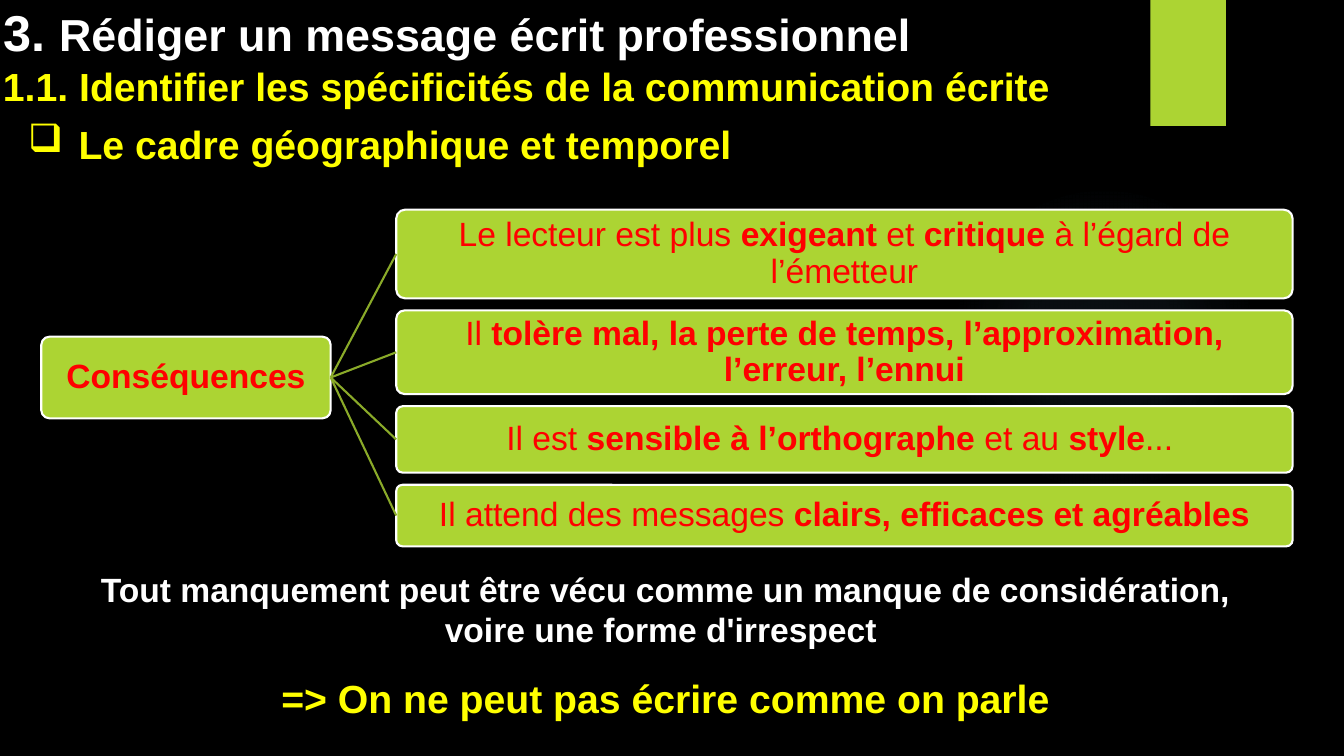
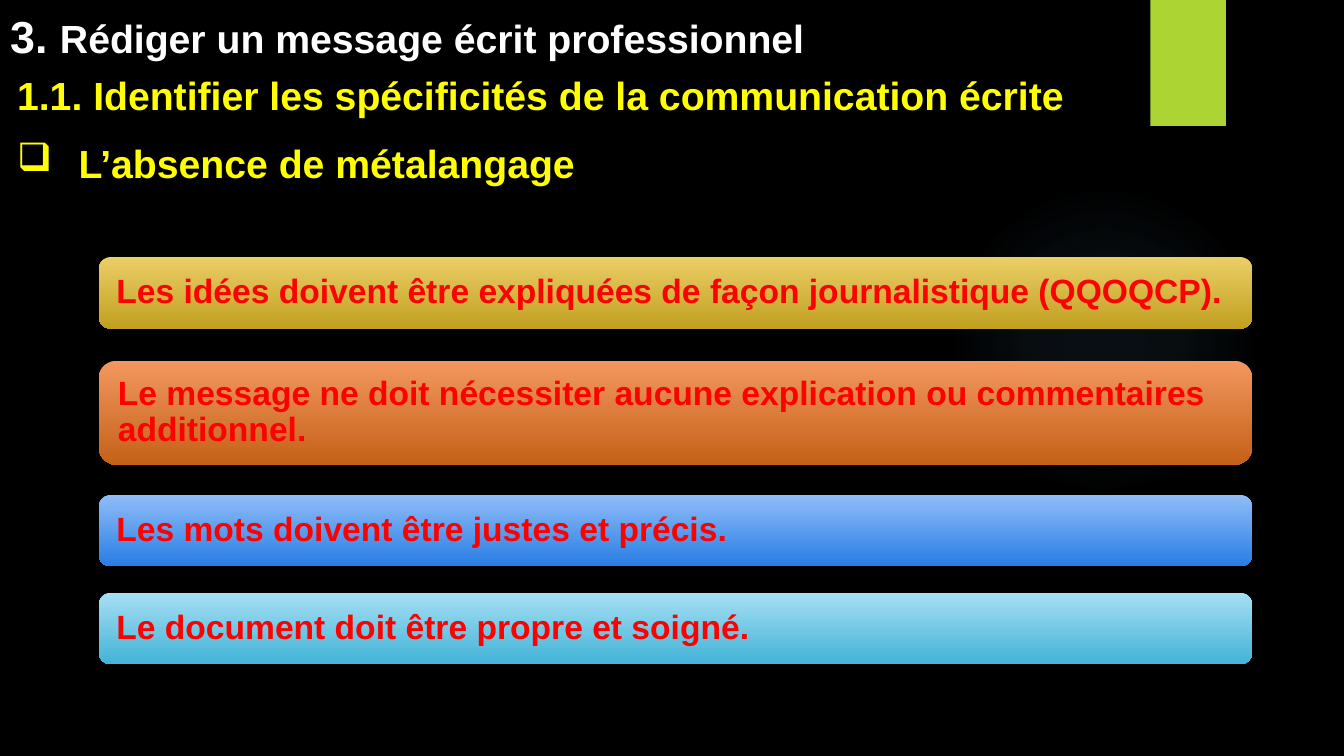
from pptx import Presentation
from pptx.dml.color import RGBColor
from pptx.enum.shapes import MSO_CONNECTOR, MSO_SHAPE
from pptx.enum.text import MSO_ANCHOR, MSO_AUTO_SIZE, PP_ALIGN
from pptx.oxml import parse_xml
from pptx.oxml.ns import nsdecls, qn
from pptx.util import Inches, Pt

BLACK = RGBColor(0x00, 0x00, 0x00)
WHITE = RGBColor(0xFF, 0xFF, 0xFF)
YELLOW = RGBColor(0xFF, 0xFF, 0x00)
RED = RGBColor(0xFF, 0x00, 0x00)
LIME = RGBColor(0xAC, 0xD4, 0x33)
OLIVE = RGBColor(0x8A, 0xAA, 0x29)
SKY = RGBColor(0x7A, 0xC4, 0xF0)
GOLD = RGBColor(0xEB, 0xCE, 0x66), RGBColor(0xC1, 0xA0, 0x21)
ORANGE = RGBColor(0xF2, 0x97, 0x5F), RGBColor(0xC5, 0x61, 0x18)
BLUE = RGBColor(0x8F, 0xBD, 0xF8), RGBColor(0x28, 0x7D, 0xE4)
CYAN = RGBColor(0xA6, 0xDF, 0xF3), RGBColor(0x43, 0xB3, 0xD8)

RECT, ROUND, OVAL = MSO_SHAPE.RECTANGLE, MSO_SHAPE.ROUNDED_RECTANGLE, MSO_SHAPE.OVAL
STRAIGHT = MSO_CONNECTOR.STRAIGHT
TOP, MIDDLE, BOTTOM = MSO_ANCHOR.TOP, MSO_ANCHOR.MIDDLE, MSO_ANCHOR.BOTTOM
LEFT, CENTER = PP_ALIGN.LEFT, PP_ALIGN.CENTER
FIXED = MSO_AUTO_SIZE.NONE

FONT = "Arial"
WIDE, HIGH = 13.33, 7.5
CELL = 0.1           # side of one grid cell, in inches
TITLE_ONLY = 5
LEFT_SITE, RIGHT_SITE = 1, 3
POINT_COL = 7.8      # column where the text of a bulleted point starts


def cells(*counts):
    return [Inches(n * CELL) for n in counts]


class Deck:
    def __init__(self):
        self.prs = Presentation()
        self.prs.slide_width, self.prs.slide_height = Inches(WIDE), Inches(HIGH)
        fill = self.prs.slide_master.background.fill
        fill.solid()
        fill.fore_color.rgb = BLACK
        self.slide = None

    def page(self, col, base, size, topic_at):
        """Start a slide with its glow, tab, title and topic line."""
        self.slide = self.prs.slides.add_slide(self.prs.slide_layouts[TITLE_ONLY])
        self.glow(94.1, 18.3, 30.8)
        self.shape(RECT, (114.1, 0, 7.5, 12.5), LIME)
        title = self.slide.shapes.title
        title.left, title.top, title.width, title.height = cells(col, 0, 112, base)
        par = self.frame(title, BOTTOM).paragraphs[0]
        par.alignment = LEFT
        self.run(par, "3. ", size + 4, WHITE)
        self.run(par, "Rédiger un message écrit professionnel", size, WHITE)
        par = self.text((*topic_at, 107, 5.7))
        self.run(par, "1.1. Identifier les spécificités de la communication écrite", 28, YELLOW)

    def frame(self, shape, anchor, inset=0):
        frame = shape.text_frame
        frame.word_wrap, frame.auto_size = True, FIXED
        frame.vertical_anchor = anchor
        frame.margin_left = frame.margin_right = cells(inset)[0]
        return frame

    def run(self, par, words, size, color, bold=True):
        run = par.add_run()
        run.text = words
        font = run.font
        font.name, font.size, font.bold = FONT, Pt(size), bold
        font.color.rgb = color

    def text(self, area, align=LEFT):
        box = self.slide.shapes.add_textbox(*cells(*area))
        par = self.frame(box, TOP).paragraphs[0]
        par.alignment = align
        return par

    def point(self, col, row, words):
        par = self.text((col, row, 100, 5.7))
        hang = cells(POINT_COL - col)[0]
        props = par._p.get_or_add_pPr()
        props.set("marL", str(hang))
        props.set("indent", str(-hang))
        props.append(parse_xml(f'<a:buChar {nsdecls("a")} char="❑"/>'))
        self.run(par, words, 28, YELLOW)

    def close(self, area, notes):
        """Stack centred paragraphs of (words, size, colour)."""
        par = self.text(area, CENTER)
        frame = par._parent
        for i, (words, size, color) in enumerate(notes):
            if i:
                par = frame.add_paragraph()
                par.alignment, par.space_before = CENTER, Pt(18)
            self.run(par, words, size, color)

    def shape(self, kind, area, fill):
        """Fill with one colour, or from top to bottom with a pair."""
        shape = self.slide.shapes.add_shape(kind, *cells(*area))
        shape.shadow.inherit = False
        shape.line.fill.background()
        if isinstance(fill, RGBColor):
            shape.fill.solid()
            shape.fill.fore_color.rgb = fill
        else:
            shape.fill.gradient()
            shape.fill.gradient_angle = 270
            for stop, color in zip(shape.fill.gradient_stops, fill):
                stop.color.rgb = color
        return shape

    def glow(self, col, row, side):
        oval = self.shape(OVAL, (col, row, side, side), SKY)
        stops = "".join(
            f'<a:gs pos="{at * 1000}"><a:srgbClr val="{SKY}">'
            f'<a:alpha val="{alpha * 1000}"/></a:srgbClr></a:gs>'
            for at, alpha in ((0, 7), (36, 6), (69, 0)))
        grad = parse_xml(
            f'<a:gradFill {nsdecls("a")}><a:gsLst>{stops}</a:gsLst><a:path path="circle">'
            '<a:fillToRect l="50000" t="50000" r="50000" b="50000"/></a:path></a:gradFill>')
        props = oval._element.spPr
        props.replace(props.find(qn("a:solidFill")), grad)

    def card(self, area, fill, runs, align=LEFT, inset=1.4):
        """Round box with red text, given as (words, bold) runs."""
        card = self.shape(ROUND, area, fill)
        par = self.frame(card, MIDDLE, inset).paragraphs[0]
        par.alignment, par.line_spacing = align, 0.9
        for words, bold in runs:
            self.run(par, words, 24, RED, bold)
        return card

    def node(self, area, runs):
        node = self.card(area, LIME, runs, CENTER, 0.5)
        node.adjustments[0] = 0.1
        node.line.color.rgb, node.line.width = WHITE, Pt(1.5)
        return node

    def link(self, root, leaf):
        link = self.slide.shapes.add_connector(STRAIGHT, 0, 0, 0, 0)
        link.begin_connect(root, RIGHT_SITE)
        link.end_connect(leaf, LEFT_SITE)
        link.line.color.rgb, link.line.width = OLIVE, Pt(1.5)
        link._element.spPr.append(parse_xml(f'<a:effectLst {nsdecls("a")}/>'))


def frame_page(deck):
    deck.page(0.3, 6.6, 32, (0.3, 5.7))
    deck.point(2.8, 11.4, "Le cadre géographique et temporel")
    root = deck.node((4.1, 33.4, 28.7, 8.1), [("Conséquences", True)])
    leaves = [
        (8.8, [("Le lecteur est plus ", False), ("exigeant", True), (" et ", False),
               ("critique", True), (" à l’égard de l’émetteur", False)]),
        (8.3, [("Il ", False),
               ("tolère mal, la perte de temps, l’approximation, l’erreur, l’ennui", True)]),
        (6.6, [("Il est ", False), ("sensible à l’orthographe ", True), ("et au ", False),
               ("style", True), ("... ", False)]),
        (6.1, [("Il attend des messages ", False),
               ("clairs, efficaces et agréables", True)]),
    ]
    row, gap = 20.8, 1.2
    for high, runs in leaves:
        deck.link(root, deck.node((39.3, row, 88.9, high), runs))
        row += high + gap
    deck.close((6, 55.9, 120, 16.3), [
        ("Tout manquement peut être vécu comme un manque de considération, "
         "voire une forme d'irrespect ", 24, WHITE),
        ("=> On ne peut pas écrire comme on parle", 28, YELLOW)])


def words_page(deck):
    deck.page(1, 6.7, 28, (1.7, 6.6))
    deck.point(1.7, 13.3, "L’absence de métalangage")
    rules = [
        (25.5, 7.1, GOLD, "Les idées doivent être expliquées de façon journalistique (QQOQCP)."),
        (35.8, 10.3, ORANGE,
         "Le message ne doit nécessiter aucune explication ou commentaires additionnel."),
        (49.1, 7.1, BLUE, "Les mots doivent être justes et précis."),
        (58.8, 7.1, CYAN, "Le document doit être propre et soigné."),
    ]
    for row, high, fill, words in rules:
        deck.card((9.8, row, 114.4, high), fill, [(words, True)])


def main():
    deck = Deck()
    frame_page(deck)
    words_page(deck)
    deck.prs.save("out.pptx")


if __name__ == "__main__":
    main()
